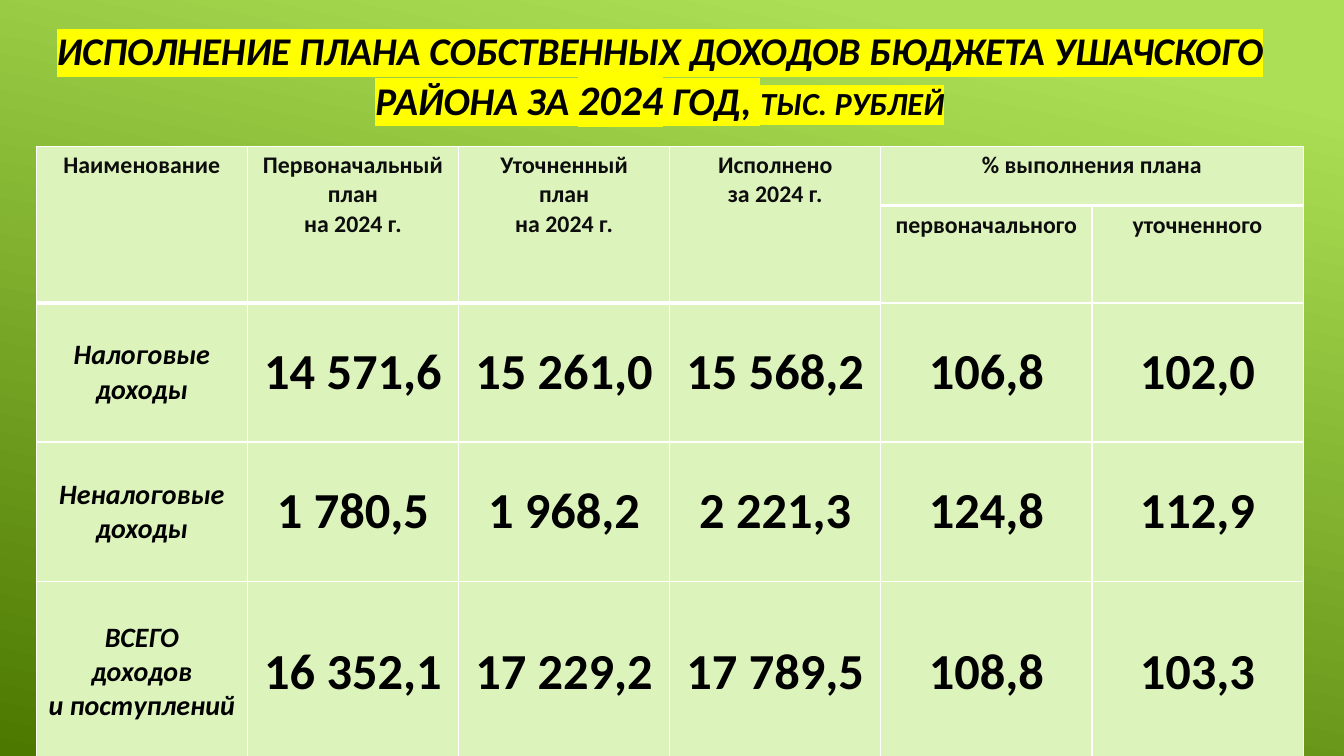
from dataclasses import dataclass

from lxml.etree import SubElement
from pptx import Presentation
from pptx.dml.color import RGBColor
from pptx.enum.text import MSO_ANCHOR as Anchor, MSO_AUTO_SIZE as AutoSize, PP_ALIGN as Align
from pptx.oxml.ns import qn
from pptx.util import Emu, Inches, Pt

COLORS = {
    "light": "ACDF55", "dark": "4C7800", "cell": "DDF3BC", "rule": "FFFFFF",
    "heading": "0D0D0D", "ink": "000000", "mark": "FFFF00",
}
FONT = "Calibri"
WIDTH, HEIGHT = Inches(13.33), Inches(7.5)
COL_SHARE = 15.71
ROW_SHARES = (7.87, 7.07, 18.4, 18.4, 24)
PLAN_COLS = 4


@dataclass(frozen=True)
class Style:
    size: int
    color: str
    italic: bool = False
    anchor: Anchor = Anchor.MIDDLE


@dataclass(frozen=True)
class Piece:
    text: str
    size: int


@dataclass(frozen=True)
class Income:
    name: str
    values: tuple[str, ...]


HEADING = Style(17, "heading", anchor=Anchor.TOP)
NAME = Style(20, "ink", italic=True)
VALUE = Style(36, "ink")

TITLE = (
    Piece("ИСПОЛНЕНИЕ ПЛАНА СОБСТВЕННЫХ ДОХОДОВ БЮДЖЕТА УШАЧСКОГО РАЙОНА ЗА ", 28),
    Piece("2024", 30),
    Piece(" ГОД, ", 28),
    Piece("ТЫС. РУБЛЕЙ", 23),
)
HEADINGS = (
    "Наименование",
    "Первоначальный план\nна 2024 г.",
    "Уточненный\nплан\nна 2024 г.",
    "Исполнено\nза 2024 г.",
    "% выполнения плана",
)
SUBHEADINGS = ("первоначального", "уточненного")
INCOMES = (
    Income("Налоговые доходы", ("14 571,6", "15 261,0", "15 568,2", "106,8", "102,0")),
    Income("Неналоговые доходы", ("1 780,5", "1 968,2", "2 221,3", "124,8", "112,9")),
    Income("ВСЕГО\nдоходов\nи поступлений", ("16 352,1", "17 229,2", "17 789,5", "108,8", "103,3")),
)


def across(share: float) -> Emu:
    return Emu(round(WIDTH * share / 100))


def down(share: float) -> Emu:
    return Emu(round(HEIGHT * share / 100))


def rgb(name: str) -> RGBColor:
    return RGBColor.from_string(COLORS[name])


def format_run(r, size: int, color: str, italic: bool) -> None:
    font = {"name": FONT, "size": Pt(size), "bold": True, "italic": italic}
    for key, value in font.items():
        setattr(r.font, key, value)
    r.font.color.rgb = rgb(color)


def highlight(r) -> None:
    rpr = r._r.get_or_add_rPr()
    mark = SubElement(rpr, qn("a:highlight"))
    SubElement(mark, qn("a:srgbClr"), val=COLORS["mark"])
    rpr.find(qn("a:solidFill")).addnext(mark)


def paint_background(s) -> None:
    fill = s.background.fill
    fill.gradient()
    fill.gradient_angle = 258
    for stop, position, color in zip(fill.gradient_stops, (0.1, 1), ("light", "dark")):
        stop.position = position
        stop.color.rgb = rgb(color)


def write_title(s) -> None:
    sp = s.shapes.title
    box = {"left": across(1.5), "top": down(1.33), "width": across(95.2), "height": down(17.33)}
    for key, value in box.items():
        setattr(sp, key, value)
    tf = sp.text_frame
    frame = {"word_wrap": True, "auto_size": AutoSize.NONE, "vertical_anchor": Anchor.MIDDLE}
    for key, value in frame.items():
        setattr(tf, key, value)
    p = tf.paragraphs[0]
    p.alignment = Align.CENTER
    for piece in TITLE:
        r = p.add_run()
        r.text = piece.text
        format_run(r, piece.size, "ink", True)
        highlight(r)


def bottom_weight(row: int, col: int) -> int:
    return 3 if row == 0 or (row == 1 and col < PLAN_COLS) else 1


def dress_cell(cell, row: int, col: int) -> None:
    top = bottom_weight(row - 1, col) if row else 1
    weights = {"lnL": 1, "lnR": 1, "lnT": top, "lnB": bottom_weight(row, col)}
    tcpr = cell._tc.get_or_add_tcPr()
    for tag, weight in weights.items():
        ln = SubElement(tcpr, qn(f"a:{tag}"), w=str(Pt(weight)))
        fill = SubElement(ln, qn("a:solidFill"))
        SubElement(fill, qn("a:srgbClr"), val=COLORS["rule"])
    cell.fill.solid()
    cell.fill.fore_color.rgb = rgb("cell")


def write_cell(cell, text: str, style: Style) -> None:
    cell.vertical_anchor = style.anchor
    cell.text = text
    for p in cell.text_frame.paragraphs:
        p.alignment = Align.CENTER
        for r in p.runs:
            format_run(r, style.size, style.color, style.italic)


def draw_table(s) -> None:
    cols = PLAN_COLS + len(SUBHEADINGS)
    table = s.shapes.add_table(
        len(ROW_SHARES), cols, across(2.7), down(19.33),
        across(COL_SHARE * cols), down(sum(ROW_SHARES)),
    ).table
    table.horz_banding = False
    for column in table.columns:
        column.width = across(COL_SHARE)
    for i, share in enumerate(ROW_SHARES):
        table.rows[i].height = down(share)
        for j in range(cols):
            dress_cell(table.cell(i, j), i, j)
    for j in range(PLAN_COLS):
        table.cell(0, j).merge(table.cell(1, j))
    table.cell(0, PLAN_COLS).merge(table.cell(0, cols - 1))
    for j, text in enumerate(HEADINGS):
        write_cell(table.cell(0, j), text, HEADING)
    for j, text in enumerate(SUBHEADINGS, PLAN_COLS):
        write_cell(table.cell(1, j), text, HEADING)
    for i, income in enumerate(INCOMES, 2):
        write_cell(table.cell(i, 0), income.name, NAME)
        for j, value in enumerate(income.values, 1):
            write_cell(table.cell(i, j), value, VALUE)


def main() -> None:
    prs = Presentation()
    prs.slide_width, prs.slide_height = WIDTH, HEIGHT
    s = prs.slides.add_slide(prs.slide_layouts.get_by_name("Title Only"))
    paint_background(s)
    write_title(s)
    draw_table(s)
    prs.save("out.pptx")


if __name__ == "__main__":
    main()
